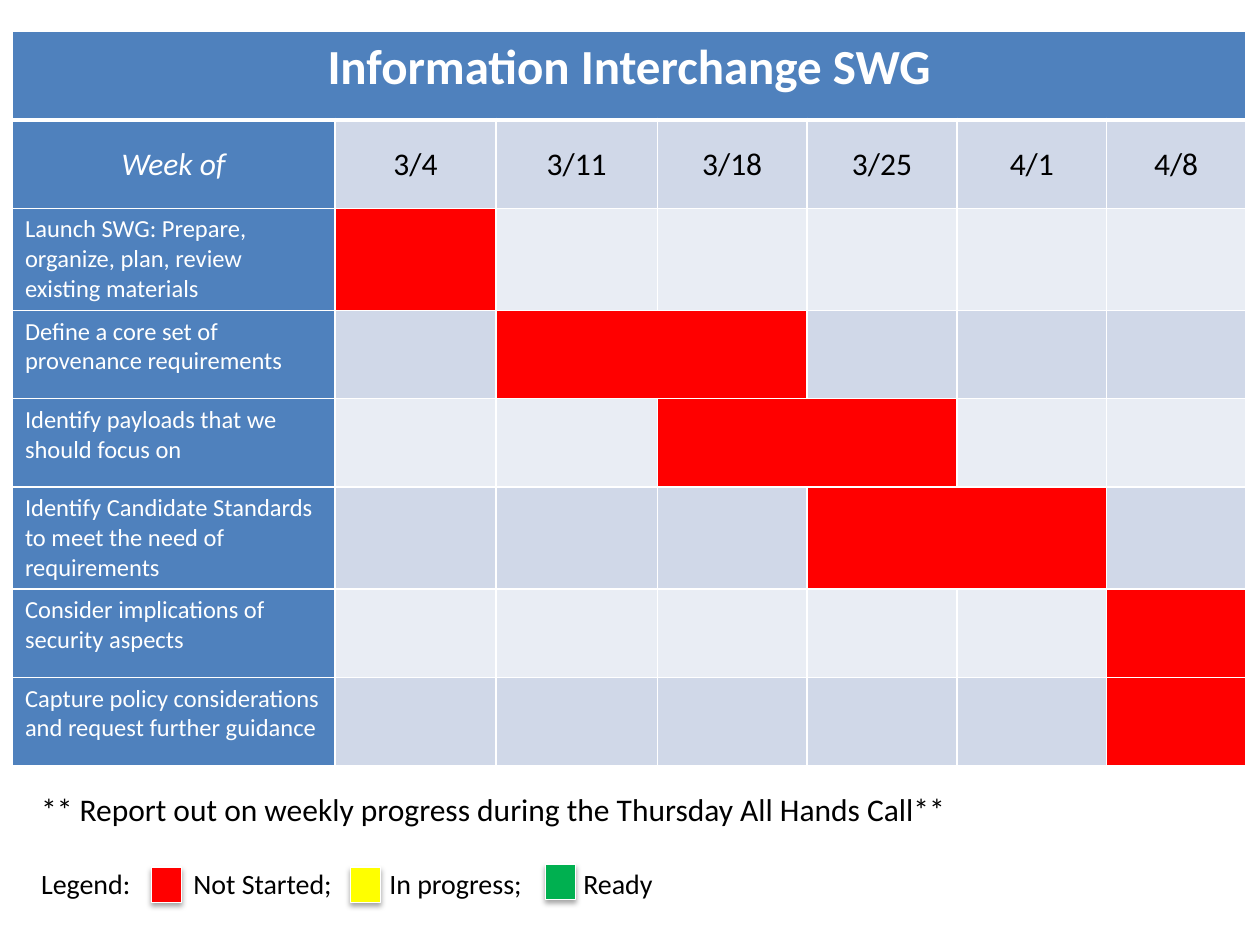
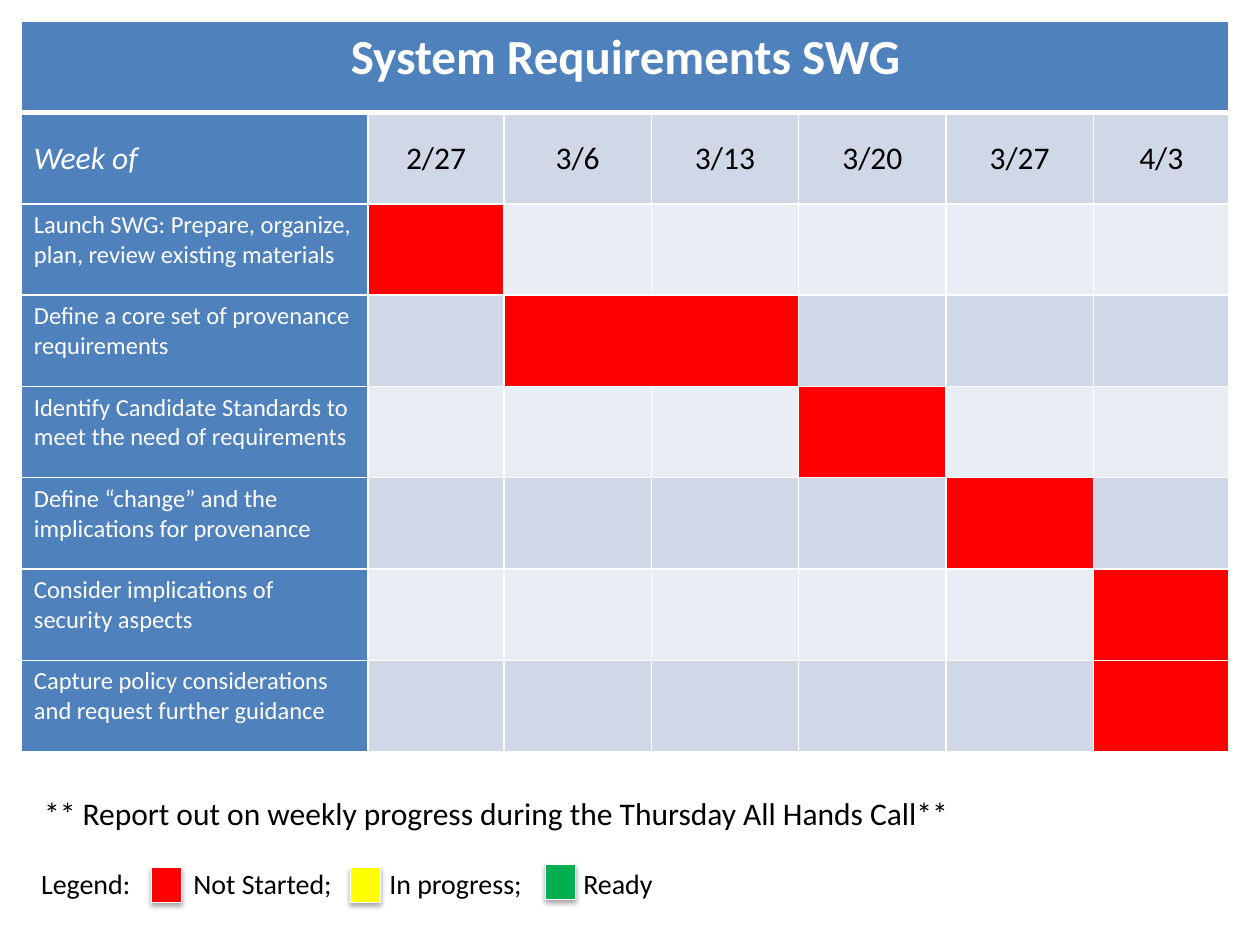
from lxml import etree
from pptx import Presentation, util as u
from pptx.dml.color import RGBColor
from pptx.enum import shapes, text
from pptx.oxml import ns

COLORS = {
    "header": "4F81BD", "dark_band": "D0D8E8", "light_band": "E9EDF4",
    "not_started": "FF0000", "in_progress": "FFFF00", "ready": "00B050",
    "white": "FFFFFF", "black": "000000",
}
FONT = "Calibri"
LAUNCH = "Launch SWG: Prepare, organize, plan, review existing materials"
CORE = "Define a core set of provenance requirements"
STANDARDS = "Identify Candidate Standards to meet the need of requirements"
SECURITY = "Consider implications of security aspects"
POLICY = "Capture policy considerations and request further guidance"

# Each task: wording, first week, last week
PLANS = [
    {
        "title": "Information Interchange SWG",
        "weeks": ["3/4", "3/11", "3/18", "3/25", "4/1", "4/8"],
        "tasks": [
            (LAUNCH, 1, 1), (CORE, 2, 3),
            ("Identify payloads that we should focus on", 3, 4),
            (STANDARDS, 4, 5), (SECURITY, 6, 6), (POLICY, 6, 6),
        ],
        "corner": (0.25, 0.64),
        "columns": [6.5, 3.25, 3.25, 3.02, 3.02, 3.02, 2.8],
        "rows": [1.78, 1.78, 2.03, 1.78, 1.78, 2.03, 1.78, 1.78],
        "week_align": text.PP_ALIGN.CENTER,
        "note_at": (0.58, 15.8),
    },
    {
        "title": "System Requirements SWG",
        "weeks": ["2/27", "3/6", "3/13", "3/20", "3/27", "4/3"],
        "tasks": [
            (LAUNCH, 1, 1), (CORE, 2, 3), (STANDARDS, 4, 4),
            ("Define “change” and the implications for provenance", 5, 5),
            (SECURITY, 6, 6), (POLICY, 6, 6),
        ],
        "corner": (0.43, 0.43),
        "columns": [6.99, 2.74] + [2.97] * 4 + [2.74],
        "rows": [1.84] * 8,
        "week_align": text.PP_ALIGN.LEFT,
        "note_at": (0.64, 15.88),
    },
]
NOTE = "** Report out on weekly progress during the Thursday All Hands Call**"
LEGEND = ["Legend:", "Not Started;", "In progress;", "Ready"]
LEGEND_TABS = [3.07, 7.02, 10.93]
SWATCHES = [("not_started", 3.05, 17.48), ("ready", 11.0, 17.42),
            ("in_progress", 7.06, 17.48)]


def rgb(name):
    return RGBColor.from_string(COLORS[name])


def paint(part, color):
    part.fill.solid()
    part.fill.fore_color.rgb = rgb(color)


def add_xml(parent, tag, **attributes):
    return etree.SubElement(parent, ns.qn(tag), attributes)


def write(frame, words, size, color, align=text.PP_ALIGN.LEFT, bold=False, italic=False):
    line = frame.paragraphs[0]
    line.text = words
    line.alignment = align
    font = line.font
    font.name, font.size, font.bold, font.italic = FONT, u.Pt(size), bold, italic
    font.color.rgb = rgb(color)
    return line


def add_schedule(slide, plan):
    left, top = plan["corner"]
    columns, rows = plan["columns"], plan["rows"]
    schedule = slide.shapes.add_table(
        len(rows), len(columns), u.Cm(left), u.Cm(top),
        u.Cm(sum(columns)), u.Cm(sum(rows))).table
    schedule.first_row = schedule.horz_banding = False
    for column, width in zip(schedule.columns, columns):
        column.width = u.Cm(width)
    for row, height in zip(schedule.rows, rows):
        row.height = u.Cm(height)

    for r in range(len(rows)):
        for c in range(len(columns)):
            cell = schedule.cell(r, c)
            for side in "LRTB":
                thick = (r, side) in [(0, "B"), (1, "T")]
                edge = add_xml(cell._tc.get_or_add_tcPr(), f"a:ln{side}",
                               w=str(u.Pt(3 if thick else 1)))
                add_xml(add_xml(edge, "a:solidFill"), "a:srgbClr", val=COLORS["white"])
            band = "dark_band" if r % 2 else "light_band"
            paint(cell, "header" if r == 0 or c == 0 else band)

    center = text.PP_ALIGN.CENTER
    schedule.cell(0, 0).merge(schedule.cell(0, len(columns) - 1))
    write(schedule.cell(0, 0).text_frame, plan["title"], 28, "white", center, bold=True)
    write(schedule.cell(1, 0).text_frame, "Week of", 18, "white",
          plan["week_align"], italic=True)
    for c, week in enumerate(plan["weeks"], 1):
        write(schedule.cell(1, c).text_frame, week, 18, "black", center)
    for c in range(len(columns)):
        schedule.cell(1, c).vertical_anchor = text.MSO_ANCHOR.MIDDLE
    for r, (task, first, last) in enumerate(plan["tasks"], 2):
        write(schedule.cell(r, 0).text_frame, task, 14, "white")
        bar = schedule.cell(r, first)
        if last > first:
            bar.merge(schedule.cell(r, last))
        paint(bar, "not_started")


def add_label(slide, left, top, width, height):
    label = slide.shapes.add_textbox(u.Cm(left), u.Cm(top), u.Cm(width), u.Cm(height))
    paint(label, "white")
    label.text_frame.word_wrap = True
    return label.text_frame


def add_legend(slide):
    frame = add_label(slide, 0.58, 17.35, 12.98, 0.94)
    stops = add_xml(frame.paragraphs[0]._p.get_or_add_pPr(), "a:tabLst")
    for position in LEGEND_TABS:
        add_xml(stops, "a:tab", pos=str(u.Cm(position)), algn="l")
    write(frame, "\t".join(LEGEND), 16, "black")

    for status, left, top in SWATCHES:
        swatch = slide.shapes.add_shape(
            shapes.MSO_SHAPE.RECTANGLE, u.Cm(left), u.Cm(top), u.Cm(0.61), u.Cm(0.71))
        paint(swatch, status)
        swatch.line.color.rgb = rgb("white")
        swatch.line.width = u.Pt(0.75)
        swatch.shadow.inherit = False
        effects = swatch._element.spPr.find(ns.qn("a:effectLst"))
        shadow = add_xml(effects, "a:outerShdw", blurRad=str(u.Pt(3.1)),
                         dist=str(u.Pt(1.8)), dir="5400000", rotWithShape="0")
        tint = add_xml(shadow, "a:srgbClr", val=COLORS["black"])
        add_xml(tint, "a:alpha", val="35000")


def main():
    deck = Presentation()
    deck.slide_width, deck.slide_height = u.Cm(25.4), u.Cm(19.05)
    for plan in PLANS:
        slide = deck.slides.add_slide(deck.slide_layouts[6])
        add_schedule(slide, plan)
        write(add_label(slide, *plan["note_at"], 23.29, 1.02), NOTE, 18, "black")
        add_legend(slide)
    deck.save("out.pptx")


if __name__ == "__main__":
    main()
